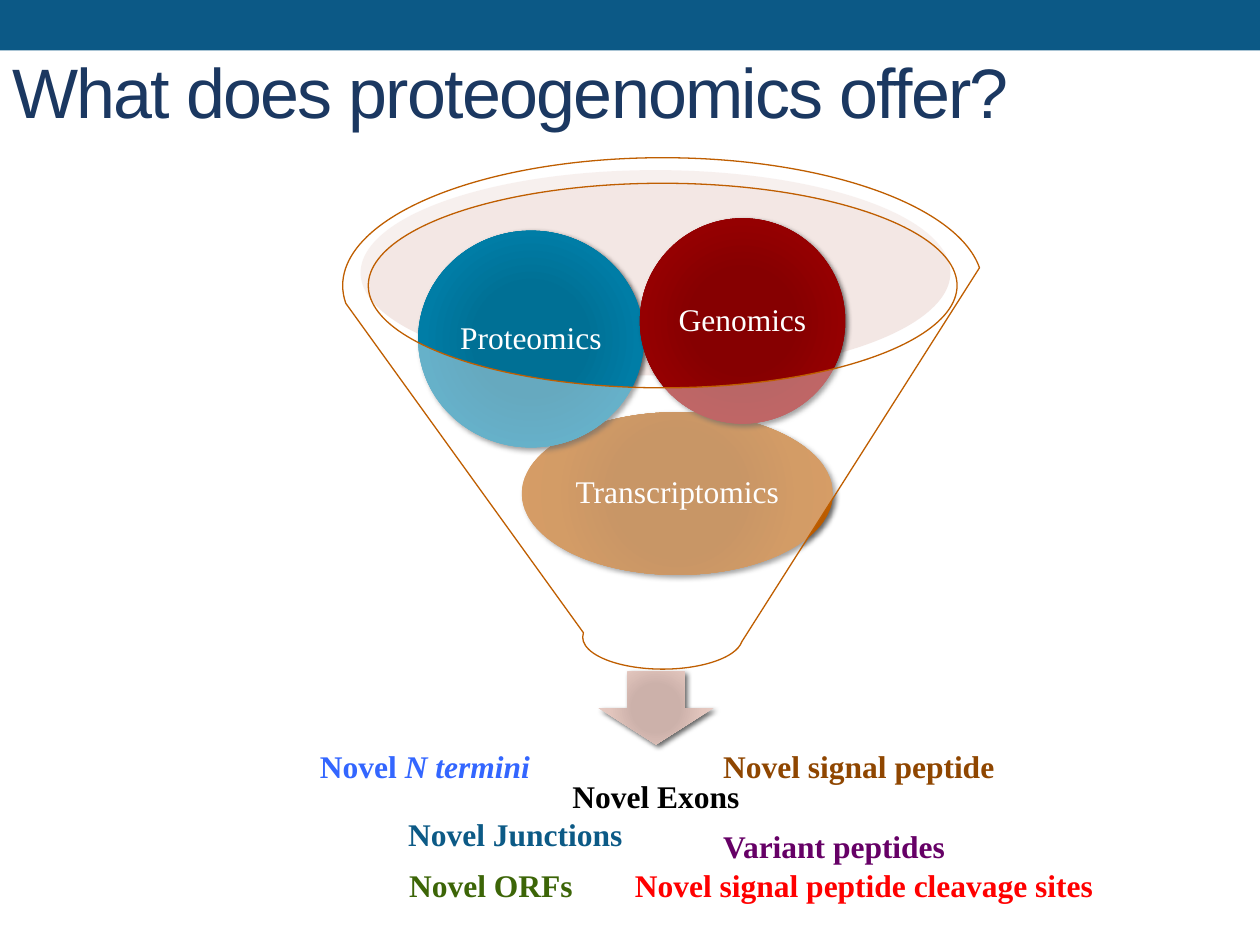
import dataclasses

import lxml.etree
import pptx
import pptx.dml.color
import pptx.enum.shapes
import pptx.enum.text
import pptx.oxml.ns
import pptx.util

Cm = pptx.util.Cm
Shapes = pptx.enum.shapes.MSO_SHAPE
Align = pptx.enum.text.PP_ALIGN
Anchor = pptx.enum.text.MSO_ANCHOR
qn = pptx.oxml.ns.qn


@dataclasses.dataclass(frozen=True)
class Theme:
    heading_font: str = "Arial"
    body_font: str = "Times New Roman"
    heading_size: int = 40
    body_size: int = 18
    band: str = "0C5986"
    heading: str = "1B3861"
    white: str = "FFFFFF"
    black: str = "000000"
    rim: str = "E2C5BD"
    outline: str = "BF5E00"
    arrow: tuple = ("CDB0A9", "CCB1AA", "E3C6BE", "E8D2CC")
    orange: tuple = ("A45000", "A45000", "B65A00", "BF5E00")
    blue: tuple = ("007095", "007095", "007DA6", "0083AE")
    red: tuple = ("860001", "860001", "950001", "9C0001")
    stops: tuple = (0, 34, 70, 100)
    n_termini: str = "3366FF"
    signal: str = "8F4600"
    junctions: str = "0C5A86"
    variants: str = "660066"
    orfs: str = "3C6507"
    cleavage: str = "FF0000"


THEME = Theme()


def rgb(color):
    return pptx.dml.color.RGBColor.from_string(color)


def child(parent, tag, **attributes):
    return lxml.etree.SubElement(
        parent, qn(tag), {name: str(value) for name, value in attributes.items()})


def place(box, left, top, width, height):
    return Cm(box[0] + left), Cm(box[1] + top), Cm(width), Cm(height)


def add_shape(slide, kind, area, color, opacity=100):
    shape = slide.shapes.add_shape(kind, *area)
    shape.shadow.inherit = False
    shape.fill.solid()
    shape.fill.fore_color.rgb = rgb(color)
    shape.line.fill.background()
    if opacity < 100:
        color_element = shape._element.spPr.find(qn("a:solidFill"))[0]
        child(color_element, "a:alpha", val=opacity * 1000)
    return shape


def add_glossy_shape(slide, kind, area, colors):
    shape = add_shape(slide, kind, area, colors[0])
    properties = shape._element.spPr
    solid = properties.find(qn("a:solidFill"))
    gradient = lxml.etree.Element(qn("a:gradFill"), rotWithShape="1")
    stops = child(gradient, "a:gsLst")
    for position, color in zip(THEME.stops, colors):
        stop = child(stops, "a:gs", pos=position * 1000)
        child(stop, "a:srgbClr", val=color)
    circle = child(gradient, "a:path", path="circle")
    child(circle, "a:fillToRect", l=100000, t=100000, r=100000, b=100000)
    properties.replace(solid, gradient)
    shadow = child(properties.find(qn("a:effectLst")), "a:outerShdw",
                   blurRad=pptx.util.Pt(3), dist=pptx.util.Pt(2),
                   dir=45 * 60000, rotWithShape=0)
    child(child(shadow, "a:srgbClr", val=THEME.black), "a:alpha", val=60000)
    return shape


def write(shape, runs, color, size=THEME.body_size, name=THEME.body_font,
          bold=False, align=Align.LEFT, anchor=Anchor.TOP, wrap=True):
    frame = shape.text_frame
    frame.word_wrap = wrap
    frame.vertical_anchor = anchor
    paragraph = frame.paragraphs[0]
    paragraph.alignment = align
    for text, italic in runs:
        run = paragraph.add_run()
        run.text = text
        if italic:
            run.font.italic = True
    font = paragraph.font
    font.name, font.size, font.bold = name, pptx.util.Pt(size), bold
    font.color.rgb = rgb(color)
    return paragraph


def add_header(slide, box):
    add_shape(slide, Shapes.RECTANGLE, place(box, 0, 0, 25.4, 1.02), THEME.band)
    title = slide.shapes.add_textbox(*place(box, 0, 0.46, 22.86, 2.74))
    paragraph = write(title, [("What does proteogenomics offer?", False)],
                      THEME.heading, THEME.heading_size, THEME.heading_font,
                      anchor=Anchor.MIDDLE)
    paragraph.runs[0].font._element.set("spc", "-100")


def add_funnel(slide, box):
    add_shape(slide, Shapes.OVAL, place(box, 0.36, 0.25, 11.89, 4.14), THEME.rim, 40)
    add_glossy_shape(slide, Shapes.DOWN_ARROW,
                     place(box, 5.16, 10.36, 2.31, 1.47), THEME.arrow)
    outcome = slide.shapes.add_textbox(*place(box, 0.79, 11.53, 11.05, 2.77))
    write(outcome, [("Novel Exons", False)], THEME.black, bold=True,
          align=Align.CENTER, anchor=Anchor.MIDDLE).line_spacing = 0.9

    sources = [
        ("Transcriptomics", (3.61, 5.13, 6.27, 3.28), THEME.orange),
        ("Proteomics", (1.52, 1.47, 4.55, 4.37), THEME.blue),
        ("Genomics", (5.99, 1.22, 4.14, 4.14), THEME.red),
    ]
    for text, area, colors in sources:
        ball = add_glossy_shape(slide, Shapes.OVAL, place(box, *area), colors)
        frame = ball.text_frame
        frame.margin_left = frame.margin_right = Cm(0.08)
        frame.margin_top = frame.margin_bottom = Cm(0.08)
        write(ball, [(text, False)], THEME.white, align=Align.CENTER,
              anchor=Anchor.MIDDLE).line_spacing = 0.9

    funnel = add_shape(slide, Shapes.FUNNEL, place(box, 0, 0, 12.9, 10.31),
                       THEME.white, 40)
    funnel.line.color.rgb = rgb(THEME.outline)
    funnel.line.width = pptx.util.Pt(0.75)


def add_findings(slide, box):
    findings = [
        ([("Novel Junctions", False)], 1.78, 1.37, 5.69, THEME.junctions, True),
        ([("Novel ORFs", False)], 1.8, 2.39, 5.69, THEME.orfs, True),
        ([("Novel signal peptide", False)], 8.13, 0, 6.07, THEME.signal, False),
        ([("Variant peptides", False)], 8.13, 1.6, 5.03, THEME.variants, False),
        ([("Novel ", False), ("N termini", True)], 0, 0, 4.98, THEME.n_termini, False),
        ([("Novel signal peptide cleavage sites", False)], 6.35, 2.39, 9.88,
         THEME.cleavage, False),
    ]
    for runs, left, top, width, color, wrap in findings:
        label = slide.shapes.add_textbox(*place(box, left, top, width, 1.02))
        write(label, runs, color, bold=True, wrap=wrap)
        label.text_frame.auto_size = pptx.enum.text.MSO_AUTO_SIZE.SHAPE_TO_FIT_TEXT


def main():
    presentation = pptx.Presentation()
    presentation.slide_width = Cm(25.4)
    presentation.slide_height = Cm(19.05)
    slide = presentation.slides.add_slide(presentation.slide_layouts[6])
    add_header(slide, (0, 0))
    add_funnel(slide, (6.91, 3.18))
    add_findings(slide, (6.2, 14.94))
    presentation.save("out.pptx")


if __name__ == "__main__":
    main()
